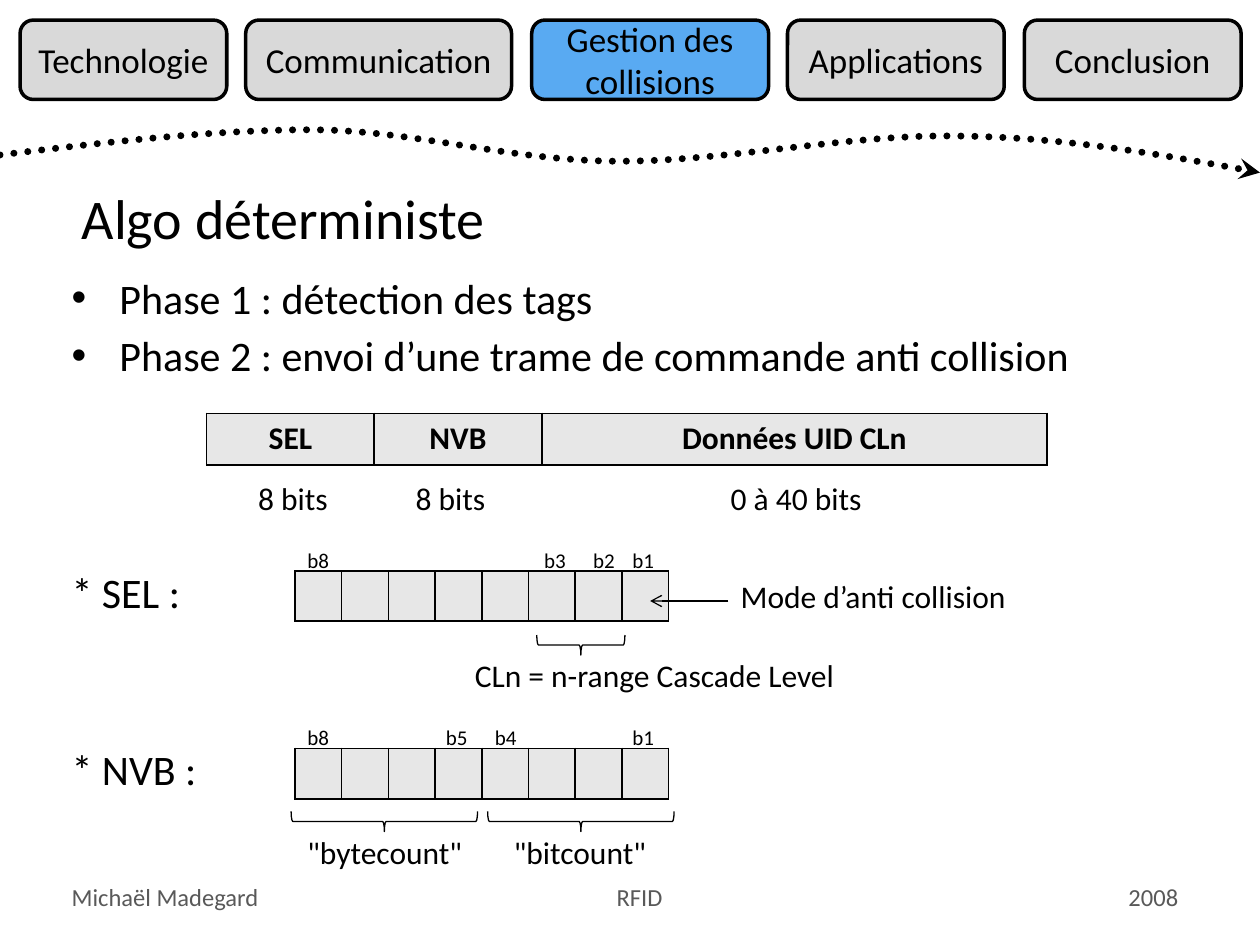
from lxml import etree
from pptx import Presentation
from pptx.dml.color import RGBColor
from pptx.enum.dml import MSO_LINE
from pptx.enum.shapes import MSO_CONNECTOR, MSO_SHAPE
from pptx.enum.text import MSO_ANCHOR, PP_ALIGN
from pptx.oxml.ns import qn
from pptx.util import Inches, Pt

BLACK, GREY, BLUE, CELL, FOOTER = "000000", "D9D9D9", "59AAF2", "E7E7E7", "595959"


def write(frame, lines, size, color=BLACK, align=PP_ALIGN.LEFT, bold=False):
    """Put one run per line in the frame and return its paragraphs."""
    frame.word_wrap = True
    for index, line in enumerate(lines):
        para = frame.paragraphs[0] if index == 0 else frame.add_paragraph()
        para.alignment = align
        span = para.add_run()
        span.text = line
        span.font.name = "Calibri"
        span.font.size = Pt(size)
        span.font.bold = bold
        span.font.color.rgb = RGBColor.from_string(color)
    return frame.paragraphs


def add_grid(left, top, widths, height, labels):
    """Add a one-row table of grey cells with thin black borders."""
    frame = page.shapes.add_table(1, len(widths), Inches(left), Inches(top),
                                  Inches(sum(widths)), Inches(height))
    grid = frame.table
    grid.first_row = grid.horz_banding = False
    grid.rows[0].height = Inches(height)
    for column, width, label in zip(grid.columns, widths, labels):
        column.width = Inches(width)
    for cell, label in zip(grid.rows[0].cells, labels):
        if label:
            write(cell.text_frame, [label], 18, align=PP_ALIGN.CENTER, bold=True)
        properties = cell._tc.get_or_add_tcPr()
        for side in ("a:lnL", "a:lnR", "a:lnT", "a:lnB"):
            border = etree.SubElement(properties, qn(side), w=str(Pt(1)))
            paint = etree.SubElement(border, qn("a:solidFill"))
            etree.SubElement(paint, qn("a:srgbClr"), val=BLACK)
        cell.fill.solid()
        cell.fill.fore_color.rgb = RGBColor.from_string(CELL)


deck = Presentation()
deck.slide_width, deck.slide_height = Inches(10), Inches(7.5)
page = deck.slides.add_slide(deck.slide_layouts[6])

# Dotted wave, sampled from its Bezier curves
curves = [
    [(0, 1.23), (0.84, 1.13), (1.69, 1.03), (2.5, 1.03)],
    [(2.5, 1.03), (3.31, 1.04), (4.02, 1.27), (4.87, 1.28)],
    [(4.87, 1.28), (5.73, 1.29), (6.76, 1.06), (7.61, 1.08)],
    [(7.61, 1.08), (8.47, 1.09), (9.23, 1.23), (10, 1.37)],
]
STEPS = 16
points = []
for curve in curves:
    for step in range(1, STEPS + 1):
        t = step / STEPS
        weights = ((1 - t) ** 3, 3 * t * (1 - t) ** 2, 3 * t ** 2 * (1 - t), t ** 3)
        points.append(tuple(Inches(sum(w * point[axis] for w, point in zip(weights, curve)))
                            for axis in (0, 1)))
builder = page.shapes.build_freeform(Inches(0), Inches(1.23))
builder.add_line_segments(points, close=False)
wave = builder.convert_to_shape()
wave.shadow.inherit = False
wave.fill.background()
wave.line.color.rgb = RGBColor.from_string(BLACK)
wave.line.width = Pt(4)
wave.line.dash_style = MSO_LINE.ROUND_DOT
wave_line = wave.line._get_or_add_ln()
wave_line.set("cap", "rnd")
etree.SubElement(wave_line, qn("a:round"))
etree.SubElement(wave_line, qn("a:tailEnd"), type="stealth")

# Navigation tabs
tabs = [
    (0.16, 1.64, ["Technologie"], GREY),
    (1.95, 2.11, ["Communication"], GREY),
    (4.22, 1.88, ["Gestion des", "collisions"], BLUE),
    (6.25, 1.72, ["Applications"], GREY),
    (8.13, 1.72, ["Conclusion"], GREY),
]
for left, width, lines, color in tabs:
    tab = page.shapes.add_shape(MSO_SHAPE.ROUNDED_RECTANGLE, Inches(left), Inches(0.16),
                                Inches(width), Inches(0.63))
    tab.shadow.inherit = False
    tab.fill.solid()
    tab.fill.fore_color.rgb = RGBColor.from_string(color)
    tab.line.color.rgb = RGBColor.from_string(BLACK)
    tab.line.width = Pt(2)
    tab.text_frame.vertical_anchor = MSO_ANCHOR.MIDDLE
    write(tab.text_frame, lines, 20, align=PP_ALIGN.CENTER)

# Bulleted phases
phases = page.shapes.add_textbox(Inches(0.47), Inches(2.11), Inches(9.14), Inches(1))
paragraphs = write(phases.text_frame, ["Phase 1 : détection des tags",
                                       "Phase 2 : envoi d’une trame de commande anti collision"], 24)
paragraphs[1].space_before = Pt(4.3)
for para in paragraphs:
    properties = para._p.get_or_add_pPr()
    properties.set("marL", str(Inches(0.38)))
    properties.set("indent", str(-Inches(0.38)))
    etree.SubElement(properties, qn("a:buFont"), typeface="Arial")
    etree.SubElement(properties, qn("a:buChar"), char="•")

# Frame layout and the two detailed bytes
SEL_TOP, NVB_TOP = 4.53, 5.94
add_grid(1.64, 3.28, [1.33, 1.33, 4.01], 0.41, ["SEL", "NVB", "Données UID CLn"])
for top in (SEL_TOP, NVB_TOP):
    add_grid(2.34, top, [0.371] * 8, 0.4, [""] * 8)

# Braces pointing down: centre x, centre y, span
for x, y, span_width in [(4.61, 5.12, 0.7), (4.61, 6.52, 1.48), (3.05, 6.52, 1.48)]:
    brace = page.shapes.add_shape(MSO_SHAPE.RIGHT_BRACE, Inches(x - 0.08),
                                  Inches(y - span_width / 2), Inches(0.16), Inches(span_width))
    brace.rotation = 90
    brace.shadow.inherit = False
    brace.fill.background()
    brace.line.color.rgb = RGBColor.from_string(BLACK)
    brace.line.width = Pt(0.75)

arrow = page.shapes.add_connector(MSO_CONNECTOR.STRAIGHT, Inches(5.78), Inches(4.77),
                                  Inches(5.16), Inches(4.77))
arrow.line.color.rgb = RGBColor.from_string(BLACK)
arrow.line.width = Pt(0.75)
etree.SubElement(arrow.line._get_or_add_ln(), qn("a:tailEnd"), type="arrow")
etree.SubElement(arrow._element.spPr, qn("a:effectLst"))

# Single-line texts: left, top, width, height, size, text
labels = [
    (0.55, 1.41, 7.73, 0.64, 32, "Algo déterministe"),
    (0.47, 4.45, 1.6, 0.5, 24, "* SEL :"),
    (0.47, 5.85, 1.6, 0.5, 24, "* NVB :"),
    (1.95, 3.75, 0.78, 0.4, 18, "8 bits"),
    (3.2, 3.75, 0.78, 0.4, 18, "8 bits"),
    (5.7, 3.75, 1.27, 0.4, 18, "0 à 40 bits"),
    (3.67, 5.16, 3.13, 0.4, 18, "CLn = n-range Cascade Level"),
    (5.78, 4.53, 2.34, 0.4, 18, "Mode d’anti collision"),
    (2.34, 6.56, 1.48, 0.4, 18, '"bytecount"'),
    (3.98, 6.56, 1.33, 0.4, 18, '"bitcount"'),
]
bit_rows = [
    (4.3, [(2.34, "b8"), (4.22, "b3"), (4.61, "b2"), (4.92, "b1")]),
    (5.7, [(2.34, "b8"), (3.44, "b5"), (3.83, "b4"), (4.92, "b1")]),
]
for top, bits in bit_rows:
    labels += [(left, top, 0.39, 0.3, 12, bit) for left, bit in bits]
for left, top, width, height, size, text in labels:
    box = page.shapes.add_textbox(Inches(left), Inches(top), Inches(width), Inches(height))
    write(box.text_frame, [text], size)

# Footer
for left, width, text, align in [(0.47, 2.34, "Michaël Madegard", PP_ALIGN.LEFT),
                                 (3.28, 3.59, "RFID", PP_ALIGN.CENTER),
                                 (7.11, 2.34, "2008", PP_ALIGN.RIGHT)]:
    box = page.shapes.add_textbox(Inches(left), Inches(6.95), Inches(width), Inches(0.34))
    write(box.text_frame, [text], 14, FOOTER, align)

deck.save("out.pptx")
